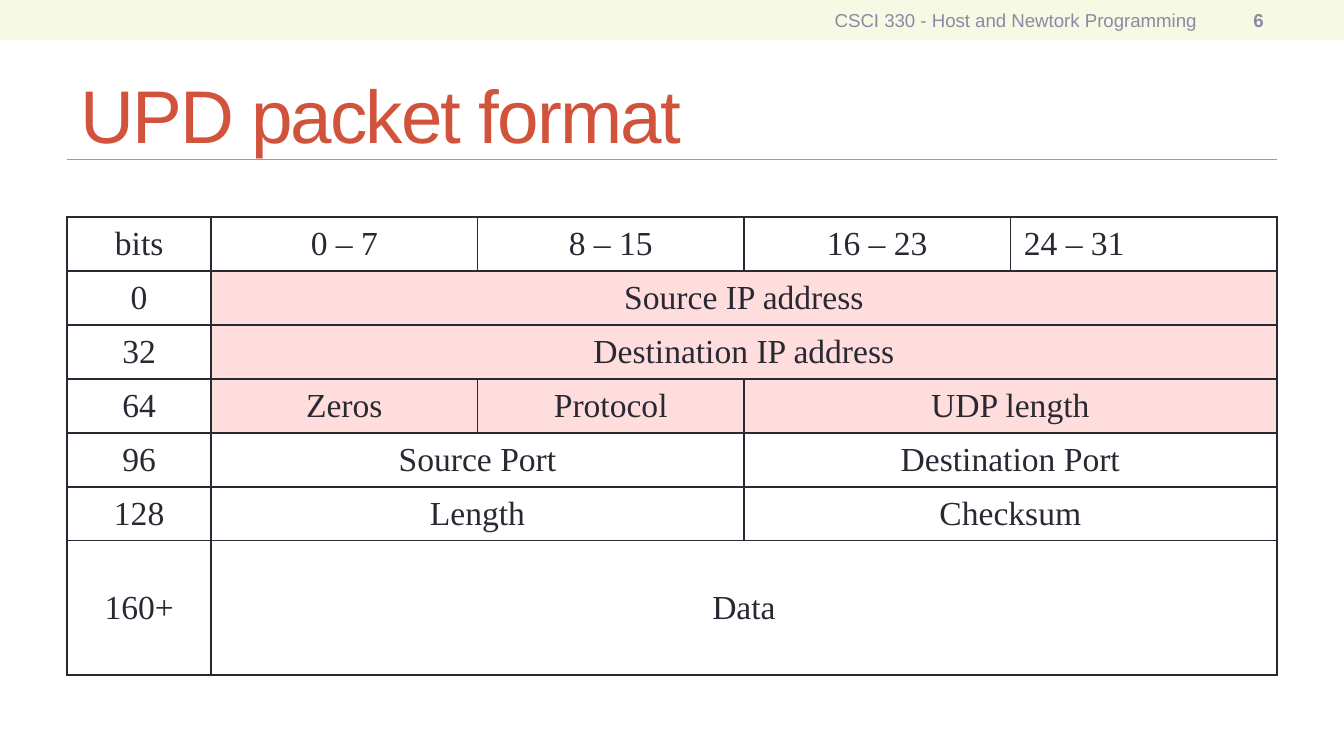
from lxml import etree
from pptx import Presentation
from pptx.dml.color import RGBColor
from pptx.enum.shapes import MSO_CONNECTOR, MSO_SHAPE
from pptx.enum.text import MSO_ANCHOR, PP_ALIGN
from pptx.oxml.ns import qn
from pptx.util import Cm, Pt

LEFT, CENTER, RIGHT = PP_ALIGN.LEFT, PP_ALIGN.CENTER, PP_ALIGN.RIGHT
MIDDLE = MSO_ANCHOR.MIDDLE
RECTANGLE = MSO_SHAPE.RECTANGLE
STRAIGHT = MSO_CONNECTOR.STRAIGHT

INK, PINK, MUTED = "292934", "FFDDDD", "8A8AA3"
MARGIN, CONTENT_WIDTH = 1.27, 22.86
BITS_WIDTH, ROW_HEIGHT, DATA_HEIGHT = 2.72, 1.02, 2.54
BYTE_COLUMNS = 4

# Each row: bit offset, fill, then fields as (text, bytes spanned)
PACKET_ROWS = [
    ("bits", None, [("0 – 7", 1), ("8 – 15", 1), ("16 – 23", 1), ("24 – 31", 1)]),
    ("0", PINK, [("Source IP address", 4)]),
    ("32", PINK, [("Destination IP address", 4)]),
    ("64", PINK, [("Zeros", 1), ("Protocol", 1), ("UDP length", 2)]),
    ("96", None, [("Source Port", 2), ("Destination Port", 2)]),
    ("128", None, [("Length", 2), ("Checksum", 2)]),
    ("160+", None, [("Data", 4)]),
]


def color(hex_string):
    return RGBColor.from_string(hex_string)


def style_paragraph(paragraph, font_name, size, hex_string, align, bold=False):
    paragraph.alignment = align
    font = paragraph.font
    font.name, font.size, font.bold = font_name, Pt(size), bold
    font.color.rgb = color(hex_string)


def add_text(slide, text, left, top, width, height, size, hex_string,
             align=LEFT, bold=False):
    box = slide.shapes.add_textbox(Cm(left), Cm(top), Cm(width), Cm(height))
    frame = box.text_frame
    frame.word_wrap = True
    frame.vertical_anchor = MIDDLE
    paragraph = frame.paragraphs[0]
    paragraph.text = text
    style_paragraph(paragraph, "Arial", size, hex_string, align, bold)
    return paragraph


def add_header_band(slide):
    band = slide.shapes.add_shape(RECTANGLE, 0, 0, Cm(25.4), Cm(0.76))
    band.shadow.inherit = False
    band.fill.solid()
    band.fill.fore_color.rgb = color("F6F9E4")
    band.line.fill.background()
    add_text(slide, "CSCI 330 - Host and Newtork Programming",
             9.53, 0.03, 13.33, 0.69, 10, MUTED, RIGHT)
    add_text(slide, "6", 22.86, 0.03, 1.27, 0.69, 10, MUTED, RIGHT, bold=True)


def add_title(slide):
    rule = slide.shapes.add_connector(
        STRAIGHT, Cm(MARGIN), Cm(3.02), Cm(MARGIN + CONTENT_WIDTH), Cm(3.02))
    rule.line.color.rgb = color("93A299")
    rule.line.width = Pt(0.75)
    etree.SubElement(rule._element.spPr, qn("a:effectLst"))
    title = add_text(slide, "UPD packet format", MARGIN, 1.12, CONTENT_WIDTH,
                     2.06, 40, "D2533C")
    title.runs[0].font._element.set("spc", "-100")


def add_borders(cell):
    properties = cell._tc.get_or_add_tcPr()
    for side in ("a:lnL", "a:lnR", "a:lnT", "a:lnB"):
        border = etree.SubElement(properties, qn(side), w=str(Pt(1)))
        fill = etree.SubElement(border, qn("a:solidFill"))
        etree.SubElement(fill, qn("a:srgbClr"), val=INK)


def fill_cell(cell, hex_string):
    if hex_string:
        cell.fill.solid()
        cell.fill.fore_color.rgb = color(hex_string)
    else:
        cell.fill.background()


def write_cell(cell, text, align=CENTER):
    cell.vertical_anchor = MIDDLE
    paragraph = cell.text_frame.paragraphs[0]
    paragraph.text = text
    style_paragraph(paragraph, "Times New Roman", 18, INK, align)


def add_packet_table(slide):
    heights = [ROW_HEIGHT] * (len(PACKET_ROWS) - 1) + [DATA_HEIGHT]
    table = slide.shapes.add_table(
        len(PACKET_ROWS), 1 + BYTE_COLUMNS, Cm(MARGIN), Cm(4.1),
        Cm(CONTENT_WIDTH), Cm(sum(heights))).table
    table.first_row = table.horz_banding = False
    byte_width = (CONTENT_WIDTH - BITS_WIDTH) / BYTE_COLUMNS
    for column, width in zip(table.columns, [BITS_WIDTH] + [byte_width] * BYTE_COLUMNS):
        column.width = Cm(width)
    for row, height in zip(table.rows, heights):
        row.height = Cm(height)

    for row, (offset, fill, fields) in enumerate(PACKET_ROWS):
        for column in range(1 + BYTE_COLUMNS):
            cell = table.cell(row, column)
            add_borders(cell)
            fill_cell(cell, fill if column else None)
        write_cell(table.cell(row, 0), offset)
        column = 1
        for text, span in fields:
            cell = table.cell(row, column)
            if span > 1:
                cell.merge(table.cell(row, column + span - 1))
            write_cell(cell, text, LEFT if text == "24 – 31" else CENTER)
            column += span


def main():
    presentation = Presentation()
    presentation.slide_width, presentation.slide_height = Cm(25.4), Cm(14.29)
    slide = presentation.slides.add_slide(presentation.slide_layouts[6])
    add_header_band(slide)
    add_title(slide)
    add_packet_table(slide)
    presentation.save("out.pptx")


if __name__ == "__main__":
    main()
